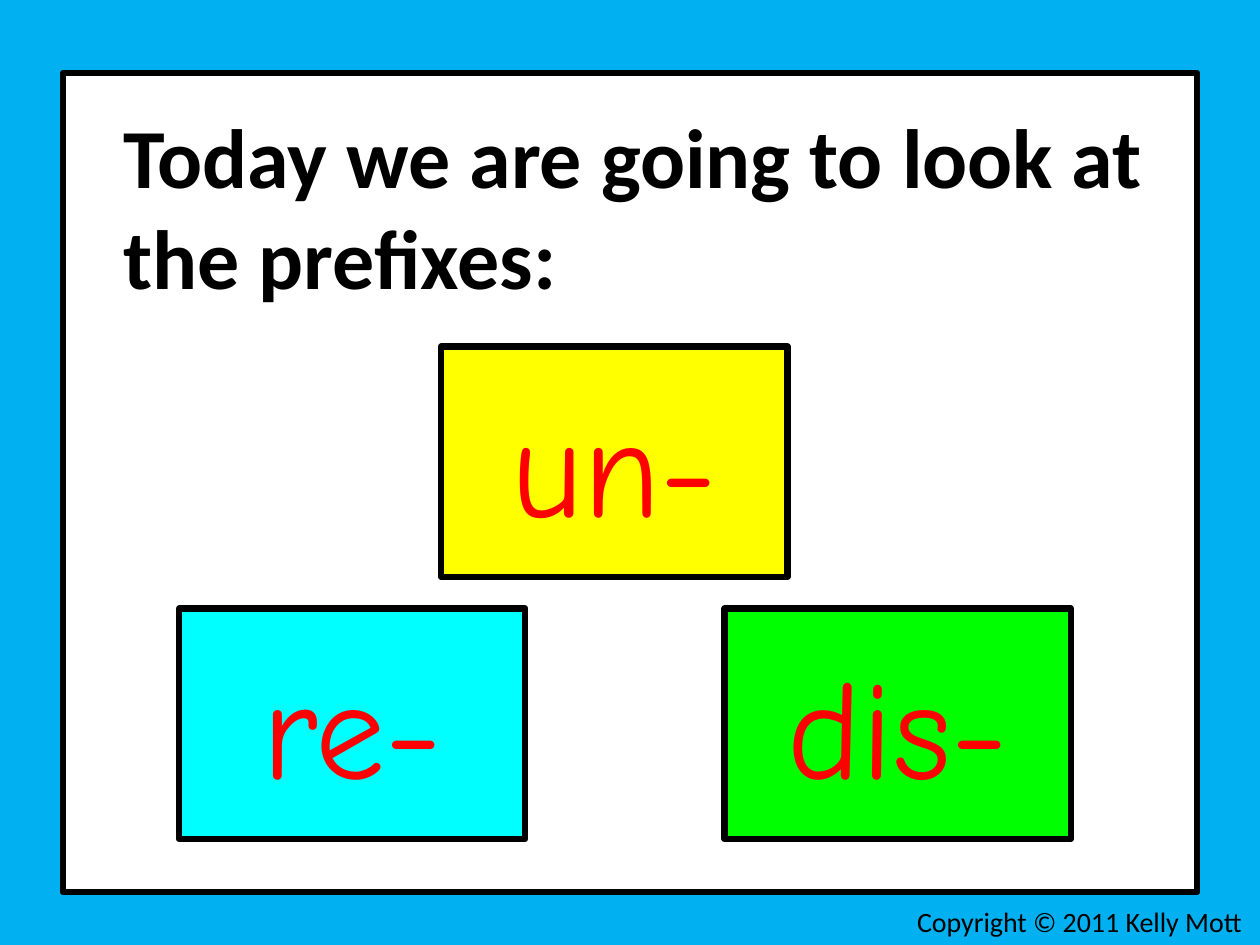
from typing import NamedTuple

from pptx import Presentation
from pptx.dml.color import RGBColor
from pptx.enum.shapes import MSO_SHAPE
from pptx.enum.text import MSO_ANCHOR, MSO_AUTO_SIZE, PP_ALIGN
from pptx.util import Inches, Pt

RECTANGLE = MSO_SHAPE.RECTANGLE
TOP, MIDDLE = MSO_ANCHOR.TOP, MSO_ANCHOR.MIDDLE
LEFT, CENTER = PP_ALIGN.LEFT, PP_ALIGN.CENTER
NO_AUTOFIT = MSO_AUTO_SIZE.NONE

TITLE_ONLY = 5
CARD_WIDTH, CARD_HEIGHT = 2.75, 1.83
UPPER_ROW, LOWER_ROW = 2.75, 4.83


class PrefixCard(NamedTuple):
    prefix: str
    left: float
    top: float
    fill: str


CARDS = [
    PrefixCard("re-", 1.42, LOWER_ROW, "00FFFF"),
    PrefixCard("un-", 3.5, UPPER_ROW, "FFFF00"),
    PrefixCard("dis-", 5.75, LOWER_ROW, "00FF00"),
]


def rgb(color: str) -> RGBColor:
    return RGBColor.from_string(color)


def paint(shape, fill: str, line_width: float) -> None:
    """Give a shape a solid fill and a black outline."""
    shape.fill.solid()
    shape.fill.fore_color.rgb = rgb(fill)
    shape.line.color.rgb = rgb("000000")
    shape.line.width = Pt(line_width)


def write(shape, text: str, *, size: float, font: str = "Calibri",
          color: str = "000000", bold: bool = False, align=LEFT,
          anchor=TOP, wrap: bool = True) -> None:
    frame = shape.text_frame
    frame.auto_size = NO_AUTOFIT
    frame.word_wrap = wrap
    frame.vertical_anchor = anchor
    paragraph = frame.paragraphs[0]
    paragraph.alignment = align
    run = paragraph.add_run()
    run.text = text
    run.font.name = font
    run.font.size = Pt(size)
    run.font.bold = bold
    run.font.color.rgb = rgb(color)


def add_card(slide, card: PrefixCard) -> None:
    box = slide.shapes.add_shape(
        RECTANGLE, Inches(card.left), Inches(card.top),
        Inches(CARD_WIDTH), Inches(CARD_HEIGHT))
    box.shadow.inherit = False
    paint(box, card.fill, 3.5)
    write(box, card.prefix, size=80, font="Comic Neue", color="FF0000",
          align=CENTER, anchor=MIDDLE)


def add_title_panel(slide) -> None:
    panel = slide.shapes.title
    panel.left, panel.top = Inches(0.5), Inches(0.58)
    panel.width, panel.height = Inches(9), Inches(6.5)
    paint(panel, "FFFFFF", 3.75)
    write(panel, "Today we are going to look at the prefixes:",
          size=48, bold=True)
    panel.text_frame.margin_left = Inches(0.48)
    panel.text_frame.margin_top = Inches(0.25)


def add_copyright(slide) -> None:
    notice = slide.shapes.add_textbox(
        Inches(7.18), Inches(7.13), Inches(2.82), Inches(0.37))
    write(notice, "Copyright © 2011 Kelly Mott", size=16, wrap=False)


def main() -> None:
    presentation = Presentation()
    presentation.slide_width = Inches(10)
    presentation.slide_height = Inches(7.5)
    slide = presentation.slides.add_slide(
        presentation.slide_layouts[TITLE_ONLY])
    slide.background.fill.solid()
    slide.background.fill.fore_color.rgb = rgb("00B0F0")

    add_title_panel(slide)
    for card in CARDS:
        add_card(slide, card)
    add_copyright(slide)
    presentation.save("out.pptx")


if __name__ == "__main__":
    main()
